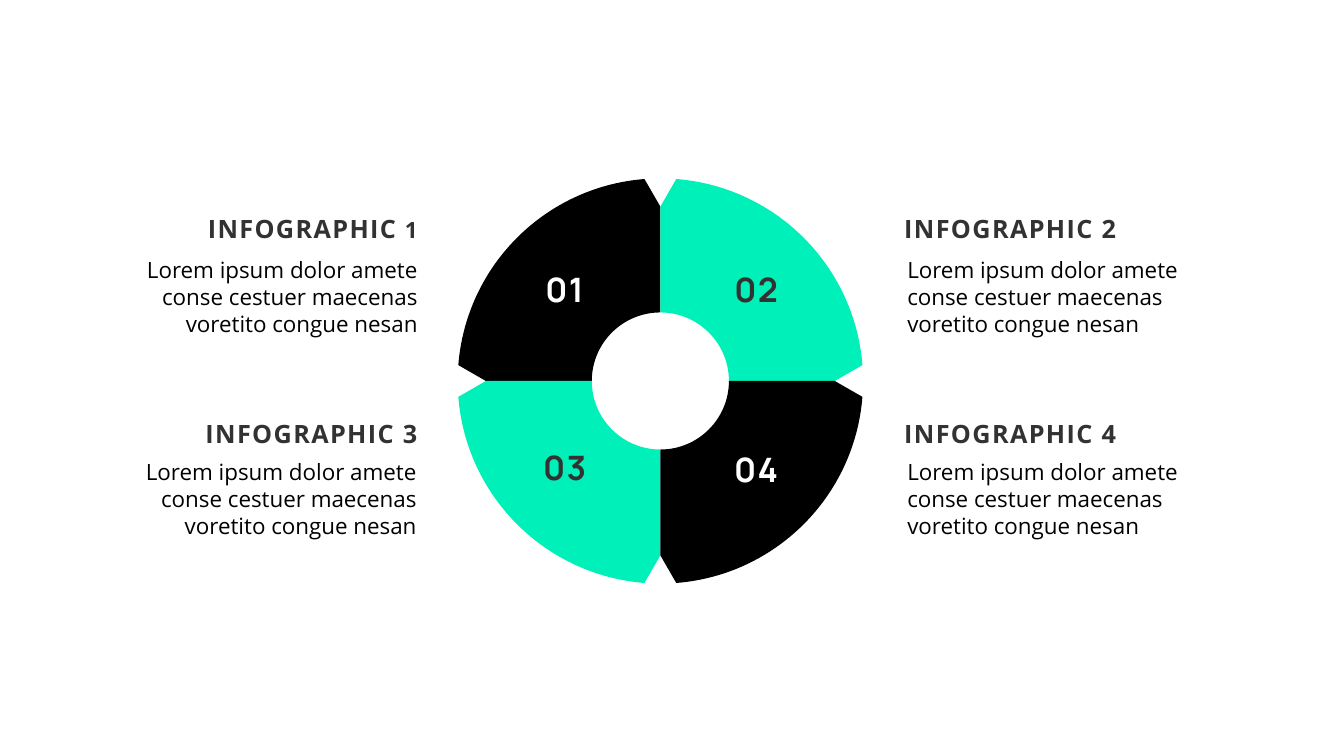
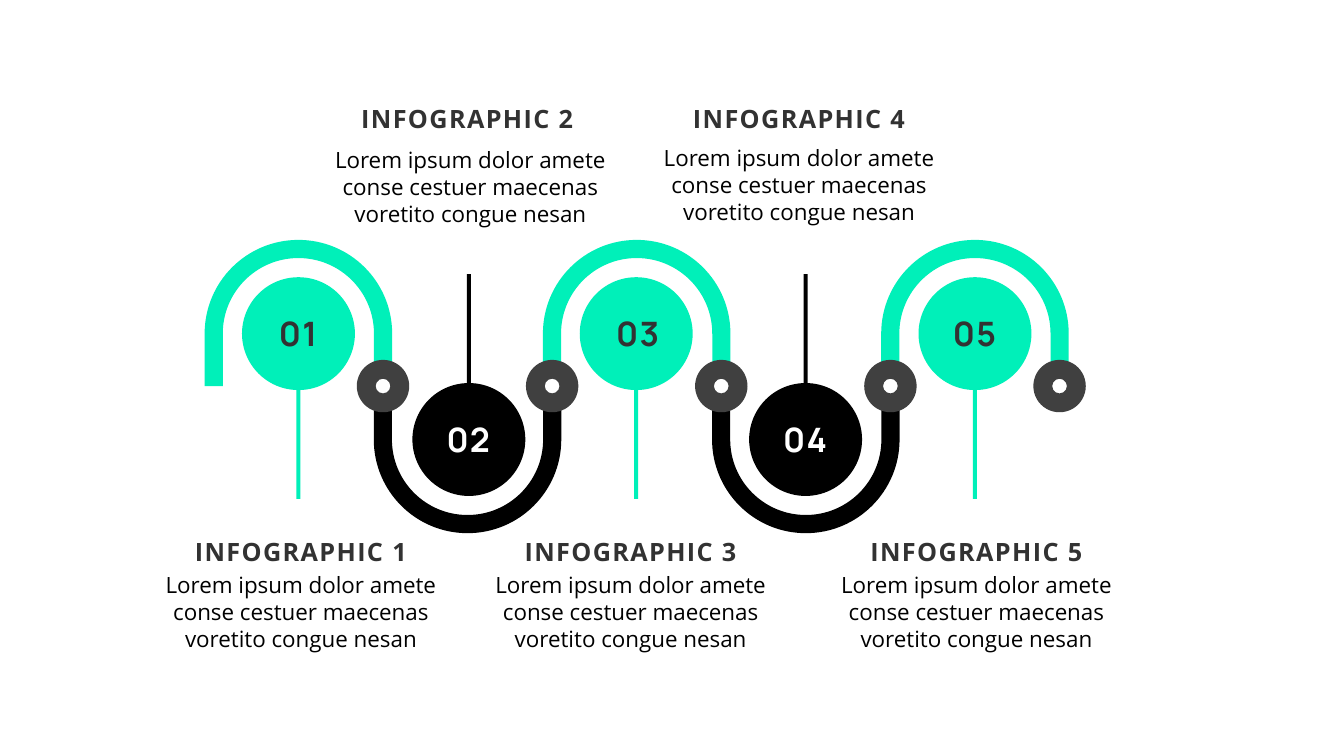
from dataclasses import dataclass
from math import cos, radians, sin, tan

from pptx import Presentation
from pptx.dml.color import RGBColor
from pptx.enum.shapes import MSO_SHAPE
from pptx.enum.text import MSO_AUTO_SIZE, PP_ALIGN
from pptx.oxml.ns import qn
from pptx.util import Inches, Pt

LEFT, CENTER, RIGHT = PP_ALIGN.LEFT, PP_ALIGN.CENTER, PP_ALIGN.RIGHT
OVAL, DONUT, RECTANGLE = MSO_SHAPE.OVAL, MSO_SHAPE.DONUT, MSO_SHAPE.RECTANGLE
GROW = MSO_AUTO_SIZE.SHAPE_TO_FIT_TEXT


@dataclass(frozen=True)
class Theme:
    black: RGBColor = RGBColor(0x00, 0x00, 0x00)
    white: RGBColor = RGBColor(0xFF, 0xFF, 0xFF)
    mint: RGBColor = RGBColor(0x00, 0xF0, 0xB9)
    ink: RGBColor = RGBColor(0x32, 0x32, 0x32)
    ring: RGBColor = RGBColor(0x40, 0x40, 0x40)
    text_font: str = "Open Sans"
    number_font: str = "Manrope"
    heading_size: int = 18
    body_size: int = 16
    number_size: int = 24
    leading: float = 1.2
    tracking: str = "100"


THEME = Theme()
BODY = "Lorem ipsum dolor amete conse cestuer maecenas voretito congue nesan"
BODY_WIDTH, BODY_HEIGHT = 3.35, 0.91
HEADING_WIDTH, HEADING_HEIGHT = 2.57, 0.4
NUMBER_HEIGHT = 0.5


# Text
def style_paragraph(para, font, size, color, align, strong=False):
    para.alignment = align
    para.line_spacing = Pt(size * THEME.leading)
    para.font.name = font
    para.font.size = Pt(size)
    para.font.color.rgb = color
    if strong:
        para.font.bold = True
        para._p.get_or_add_pPr().get_or_add_defRPr().set("spc", THEME.tracking)


def add_text_box(page, left, top, width, height):
    box = page.shapes.add_textbox(
        Inches(left), Inches(top), Inches(width), Inches(height))
    box.text_frame.word_wrap = True
    box.text_frame.auto_size = GROW
    return box.text_frame.paragraphs[0]


def add_heading(page, number, left, top, align, number_size=None):
    para = add_text_box(page, left, top, HEADING_WIDTH, HEADING_HEIGHT)
    if number_size:
        para.add_run().text = "INFOGRAPHIC"
        span = para.add_run()
        span.text = f" {number}"
        span.font.size = Pt(number_size)
    else:
        para.add_run().text = f"INFOGRAPHIC {number}"
    style_paragraph(para, THEME.text_font, THEME.heading_size, THEME.ink,
                    align, strong=True)


def add_body(page, left, top, align):
    para = add_text_box(page, left, top, BODY_WIDTH, BODY_HEIGHT)
    para.add_run().text = BODY
    style_paragraph(para, THEME.text_font, THEME.body_size, THEME.black, align)


def add_number(page, number, left, top, width, fill):
    para = add_text_box(page, left, top, width, NUMBER_HEIGHT)
    para.add_run().text = f"{number:02}"
    color = THEME.ink if fill == THEME.mint else THEME.white
    style_paragraph(para, THEME.number_font, THEME.number_size, color,
                    CENTER, strong=True)


# Shapes
def paint(shape, fill):
    shape.shadow.inherit = False
    shape.fill.solid()
    shape.fill.fore_color.rgb = fill
    shape.line.fill.background()
    return shape


def add_preset(page, kind, left, top, width, height, fill):
    shape = page.shapes.add_shape(
        kind, Inches(left), Inches(top), Inches(width), Inches(height))
    return paint(shape, fill)


def add_round(page, kind, x, y, size, fill):
    return add_preset(page, kind, x - size / 2, y - size / 2, size, size, fill)


def curve(radius, start, end):
    """Two controls and the end of an arc around the origin, in degrees."""
    first, last = radians(start), radians(end)
    pull = 4 / 3 * tan((last - first) / 4)
    return [
        (radius * (cos(first) - pull * sin(first)),
         radius * (sin(first) + pull * cos(first))),
        (radius * (cos(last) + pull * sin(last)),
         radius * (sin(last) - pull * cos(last))),
        (radius * cos(last), radius * sin(last)),
    ]


def point_at(radius, angle):
    return [(radius * cos(radians(angle)), radius * sin(radians(angle)))]


def add_outline(page, pieces, x, y, flip_x, flip_y, fill):
    """Draw pieces around (x, y): one point is a corner, three are a curve."""
    places = [(Inches(x + flip_x * across), Inches(y + flip_y * down))
              for piece in pieces for across, down in piece]
    builder = page.shapes.build_freeform(*places[0], scale=1.0)
    builder.add_line_segments(places[1:], close=True)
    shape = builder.convert_to_shape()

    # Join the three segments of each curve into one cubic segment
    segments = iter(list(shape._element.iter(qn("a:lnTo"))))
    for piece in pieces[1:]:
        group = [next(segments) for _ in piece]
        if len(group) == 3:
            cubic = group[0].makeelement(qn("a:cubicBezTo"), {})
            group[0].addprevious(cubic)
            for segment in group:
                cubic.append(segment[0])
                segment.getparent().remove(segment)
    return paint(shape, fill)


# Slide with a wheel of four quarters
def build_wheel(page):
    x, y = 6.55, 3.78
    outer, inner, notch, gap = 2.01, 0.68, 1.73, 4.5
    number_width = 0.84
    quarter = [
        [(0, notch)], point_at(outer, 90 - gap), curve(outer, 90 - gap, gap),
        [(notch, 0)], [(inner, 0)], curve(inner, 0, 90),
    ]
    # number, sides of the centre, fill, number top, heading place, body place
    quarters = [
        (1, -1, -1, THEME.black, 2.62, (1.67, 2.07), (0.89, 2.49)),
        (2, 1, -1, THEME.mint, 2.62, (8.87, 2.07), (8.9, 2.49)),
        (3, -1, 1, THEME.mint, 4.38, (1.67, 4.1), (0.88, 4.5)),
        (4, 1, 1, THEME.black, 4.4, (8.87, 4.1), (8.9, 4.5)),
    ]
    for number, side, level, fill, number_top, heading, body in quarters:
        align = RIGHT if side < 0 else LEFT
        add_outline(page, quarter, x, y, side, level, fill)
        add_number(page, number, x + side * 0.95 - number_width / 2,
                   number_top, number_width, fill)
        add_heading(page, number, *heading, align,
                    THEME.body_size if number == 1 else None)
        add_body(page, *body, align)


# Slide with a wave of five steps
def build_wave(page):
    axis, outer, inner = 3.83, 0.93, 0.75
    first, last = 2.96, 9.67
    disc_size, stem_width, stem_length = 1.12, 0.04, 1.64
    number_width = 0.73
    # disc centre, number left, heading place, body place
    steps = [
        (2.96, 2.59, (1.7, 5.27), (1.31, 5.62)),
        (4.65, 4.28, (3.35, 0.98), (2.99, 1.4)),
        (6.31, 5.96, (4.97, 5.27), (4.58, 5.62)),
        (7.99, 7.62, (6.64, 0.98), (6.25, 1.38)),
        (9.67, 9.3, (8.4, 5.27), (8.01, 5.62)),
    ]
    pitch = (last - first) / (len(steps) - 1)
    centers = [first + index * pitch for index in range(len(steps))]
    above, below = (-1, 0.52, THEME.mint), (1, 0.53, THEME.black)
    styles = [below if index % 2 else above for index in range(len(steps))]

    # Arches first, so that the rings cover their joints
    for x, (level, rise, fill) in zip(centers, styles):
        arch = [
            [(outer, -rise)], [(outer, 0)],
            curve(outer, 0, 90), curve(outer, 90, 180),
            [(-outer, -rise)], [(-inner, -rise)], [(-inner, 0)],
            curve(inner, 180, 90), curve(inner, 90, 0), [(inner, -rise)],
        ]
        add_outline(page, arch, x, axis + level * rise, 1, level, fill)
    for x in centers:
        add_round(page, OVAL, x + pitch / 2, axis, 0.34, THEME.white)
        ring = add_round(page, DONUT, x + pitch / 2, axis, 0.52, THEME.ring)
        ring.adjustments[0] = 0.36

    # Discs, stems and captions
    for index, (x, number_left, heading, body) in enumerate(steps):
        number = index + 1
        level, rise, fill = styles[index]
        y = axis + level * rise
        stem_top = y - stem_length if level > 0 else y
        add_round(page, OVAL, x, y, disc_size, fill)
        add_preset(page, RECTANGLE, x - stem_width / 2, stem_top,
                   stem_width, stem_length, fill)
        add_number(page, number, number_left, y - NUMBER_HEIGHT / 2,
                   number_width, fill)
        add_heading(page, number, *heading, CENTER)
        add_body(page, *body, CENTER)


def main():
    deck = Presentation()
    deck.slide_width, deck.slide_height = Inches(13.33), Inches(7.5)
    for build in (build_wheel, build_wave):
        build(deck.slides.add_slide(deck.slide_layouts[6]))
    deck.save("out.pptx")


if __name__ == "__main__":
    main()
